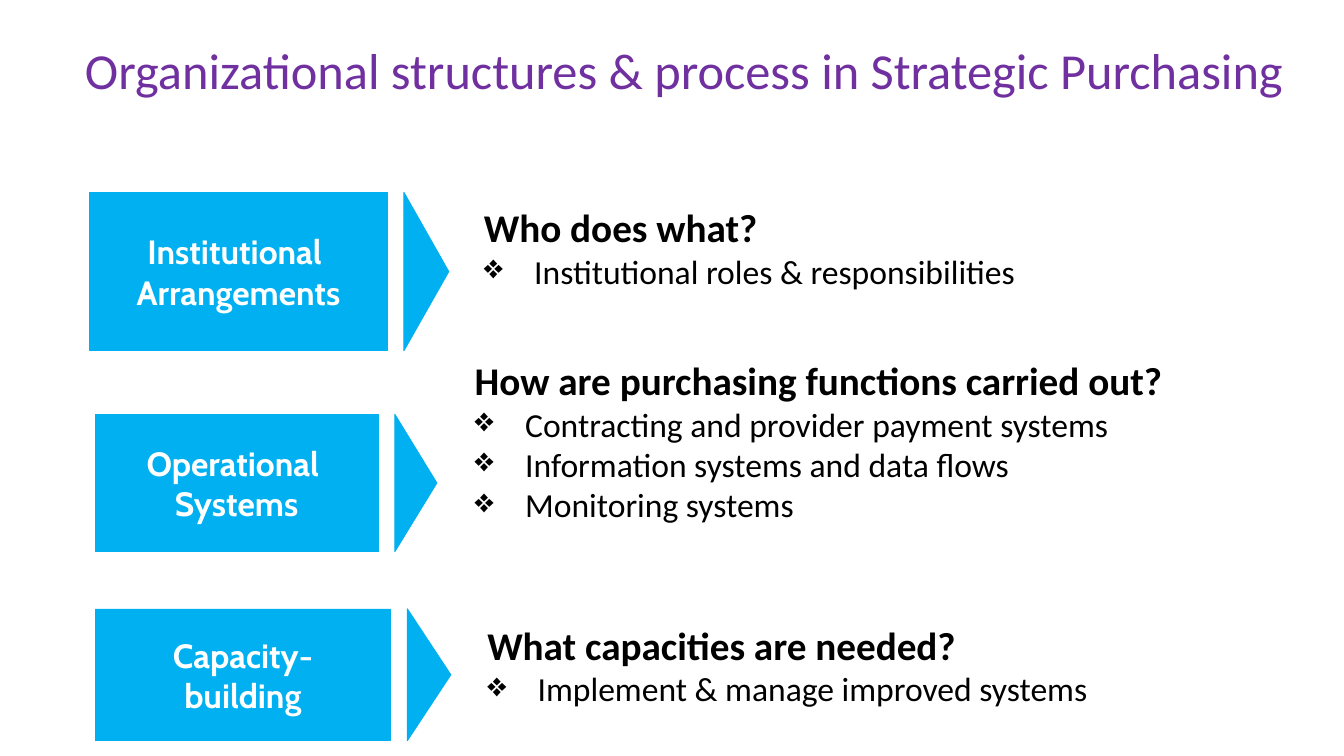
from dataclasses import dataclass

from lxml import etree
from pptx import Presentation
from pptx.dml.color import RGBColor
from pptx.enum import shapes, text
from pptx.oxml.ns import qn
from pptx.util import Pt


@dataclass(frozen=True)
class Theme:
    title_color: RGBColor = RGBColor(0x70, 0x30, 0xA0)
    accent: RGBColor = RGBColor(0x00, 0xB0, 0xF0)
    ink: RGBColor = RGBColor(0, 0, 0)
    on_accent: RGBColor = RGBColor(255, 255, 255)
    body_font: str = "Calibri"
    label_font: str = "Cabin"
    title_size: int = 36
    question_size: int = 28
    body_size: int = 24


def write(paragraph, words, *, font, size, color, bold=False,
          align=text.PP_ALIGN.LEFT, bullet=None, indent=36):
    paragraph.alignment = align
    run = paragraph.add_run()
    run.text = words
    run.font.name = font
    run.font.size = Pt(size)
    run.font.bold = bold
    run.font.color.rgb = color
    if bullet:
        properties = paragraph._p.get_or_add_pPr()
        properties.set("marL", str(Pt(indent)))
        properties.set("indent", str(-Pt(indent)))
        etree.SubElement(properties, qn("a:buChar")).set("char", bullet)


class SlideBuilder:
    def __init__(self, slide, theme):
        self.slide = slide
        self.theme = theme

    def title(self, words, left, top, width, height):
        heading = self.slide.shapes.title
        heading.left, heading.top = Pt(left), Pt(top)
        heading.width, heading.height = Pt(width), Pt(height)
        frame = heading.text_frame
        frame.word_wrap = True
        frame.vertical_anchor = text.MSO_ANCHOR.MIDDLE
        frame.paragraphs[0].line_spacing = 0.9
        write(frame.paragraphs[0], words, font=self.theme.body_font,
              size=self.theme.title_size, color=self.theme.title_color)

    def accent_shape(self, kind, left, top, width, height, line):
        shape = self.slide.shapes.add_shape(
            kind, Pt(left), Pt(top), Pt(width), Pt(height))
        shape.shadow.inherit = False
        shape.fill.solid()
        shape.fill.fore_color.rgb = self.theme.accent
        shape.line.color.rgb = self.theme.accent
        shape.line.width = Pt(line)
        return shape

    def label(self, lines, left, top, width, height):
        box = self.accent_shape(shapes.MSO_SHAPE.RECTANGLE,
                                left, top, width, height, 0.5)
        frame = box.text_frame
        frame.word_wrap = False
        frame.vertical_anchor = text.MSO_ANCHOR.MIDDLE
        for number, words in enumerate(lines):
            paragraph = frame.add_paragraph() if number else frame.paragraphs[0]
            write(paragraph, words, font=self.theme.label_font,
                  size=self.theme.body_size, color=self.theme.on_accent,
                  bold=True, align=text.PP_ALIGN.CENTER)

    def pointer(self, left, top, depth, height):
        """Draw a triangle pointing right; the lengths are those seen after turning."""
        pointer = self.accent_shape(
            shapes.MSO_SHAPE.ISOSCELES_TRIANGLE, left + (depth - height) / 2,
            top + (height - depth) / 2, height, depth, 0.75)
        pointer.rotation = 90

    def question(self, words, answers, left, top, width, height):
        box = self.slide.shapes.add_textbox(
            Pt(left), Pt(top), Pt(width), Pt(height))
        frame = box.text_frame
        frame.word_wrap = True
        style = dict(font=self.theme.body_font, color=self.theme.ink)
        write(frame.paragraphs[0], words, size=self.theme.question_size,
              bold=True, **style)
        for answer in answers:
            write(frame.add_paragraph(), answer, size=self.theme.body_size,
                  bullet="❖", **style)


POINTER_GAP = 12
QUESTION_GAP = 62

# label lines, label box, pointer depth, question, answers, question top/width/height
ROWS = [
    (["Institutional ", "Arrangements"], (64, 137.5, 212.5, 113), 32,
     "Who does what?", ["Institutional roles & responsibilities"],
     (142, 400, 92)),
    (["Operational ", "Systems"], (68, 296, 202, 98), 30,
     "How are purchasing functions carried out?",
     ["Contracting and provider payment systems",
      "Information systems and data flows", "Monitoring systems"],
     (251, 508, 128)),
    (["Capacity-", "building"], (68, 435, 211, 94), 31,
     "What capacities are needed?", ["Implement & manage improved systems"],
     (440, 510, 71)),
]


def main():
    deck = Presentation()
    deck.slide_width, deck.slide_height = Pt(960), Pt(540)
    builder = SlideBuilder(deck.slides.add_slide(deck.slide_layouts[5]), Theme())
    builder.title("Organizational structures & process in Strategic Purchasing",
                  53.5, 0, 875.5, 104.5)
    for lines, box, depth, question, answers, place in ROWS:
        left, top, width, height = box
        right = left + width
        builder.question(question, answers, right + QUESTION_GAP, *place)
        builder.label(lines, *box)
        builder.pointer(right + POINTER_GAP, top, depth, height)
    deck.save("out.pptx")


if __name__ == "__main__":
    main()
